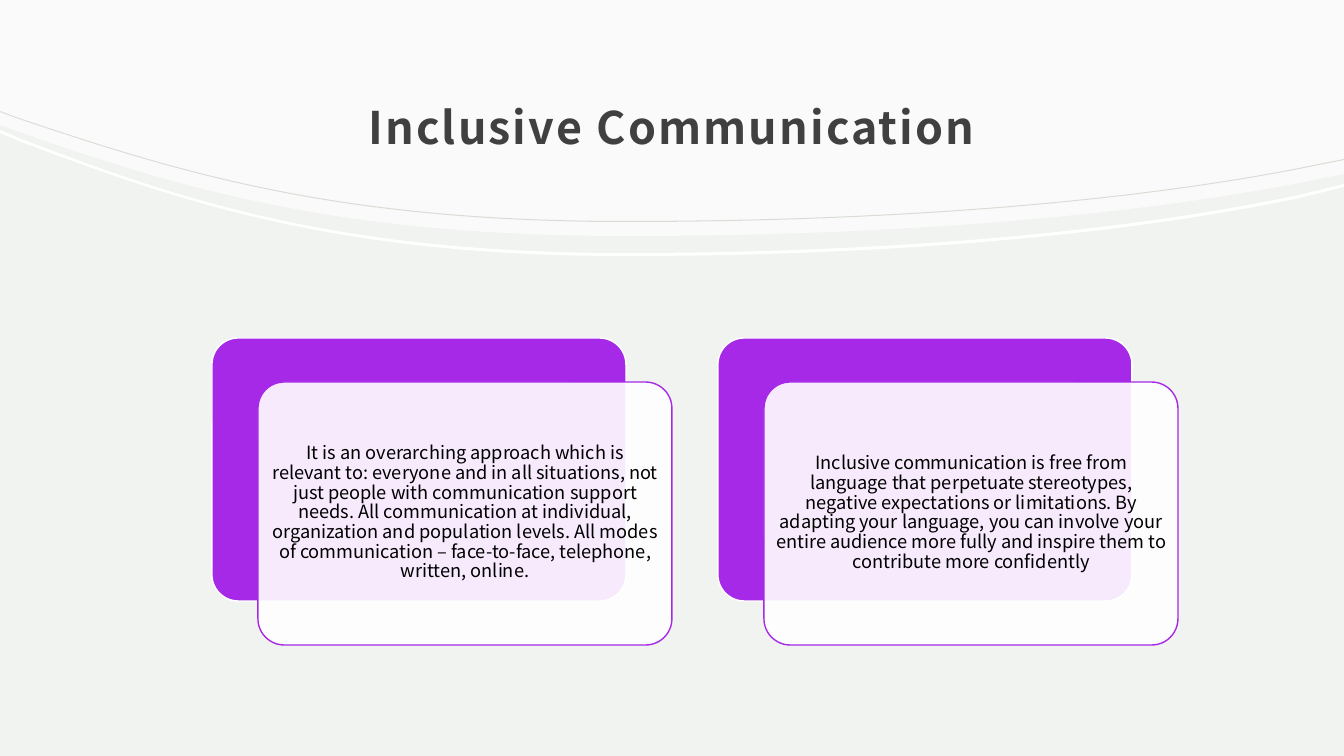
from dataclasses import dataclass

from lxml import etree
from pptx import Presentation
from pptx import util as u
from pptx.dml.color import RGBColor
from pptx.enum import shapes, text
from pptx.oxml.ns import qn

EMU_PER_PX = 914400 / 100.8
SLIDE_WIDTH, SLIDE_HEIGHT = 1344, 756


@dataclass(frozen=True)
class Theme:
    font: str = "Noto Sans CJK JP"
    background: str = "F1F3F0"
    white: str = "FFFFFF"
    accent: str = "A629E7"
    hairline: str = "D8DED5"
    title: str = "404040"
    body: str = "000000"
    title_size: int = 32
    body_size: int = 13


THEME = Theme()

# Header edges: a short line, two cubic curves, a short line.
# All edges share the x positions of their points and control points.
CURVE_X = [0, 19, 180, 336, 625, 882, 1119, 1299, 1344]
PANEL_EDGE = [125, 132, 188, 236, 236, 236, 218, 183, 174]
WHITE_TOP = [130, 138, 200, 253, 253, 253, 233, 195, 184]
WHITE_BOTTOM = [133, 141, 202, 256, 256, 256, 236, 198, 187]
GREY_TOP = [111, 118, 172, 221, 221, 221, 203, 168, 159]
GREY_BOTTOM = [y + 1 for y in GREY_TOP]
CURVE_STARTS = (2, 5)

# Cards
CARD_LEFT, CARD_TOP, CARD_WIDTH, CARD_HEIGHT = 212, 338, 414, 263
CARD_PITCH, FRONT_DX, FRONT_DY, TEXT_INSET = 506, 46, 44, 7
CARD_TEXTS = [
    "It is an overarching approach which is relevant to: everyone and in all "
    "situations, not just people with communication support needs. All "
    "communication at individual, organization and population levels. All modes "
    "of communication – face-to-face, telephone, written, online.",
    "Inclusive communication is free from language that perpetuate stereotypes, "
    "negative expectations or limitations. By adapting your language, you can "
    "involve your entire audience more fully and inspire them to contribute more "
    "confidently",
]


def px(length):
    return u.Emu(round(length * EMU_PER_PX))


def set_fill(shape, color, opacity=100):
    shape.shadow.inherit = False
    shape.fill.solid()
    shape.fill.fore_color.rgb = RGBColor.from_string(color)
    if opacity < 100:
        color_element = shape.element.spPr.find(qn("a:solidFill"))[0]
        etree.SubElement(color_element, qn("a:alpha"), val=str(opacity * 1000))


def bend(shape, starts):
    """Turn each run of three line segments that begins at a start into a cubic curve."""
    segments = list(shape.element.iter(qn("a:lnTo")))
    for start in starts:
        first, *others = segments[start:start + 3]
        cubic = etree.Element(qn("a:cubicBezTo"))
        first.addprevious(cubic)
        for segment in (first, *others):
            cubic.append(segment[0])
            segment.getparent().remove(segment)


def add_band(slide, top, bottom, color, opacity=100):
    """Fill between a bottom edge and a top edge, or the slide's top if there is none."""
    upper = list(zip(CURVE_X, top)) if top else [(0, 0), (SLIDE_WIDTH, 0)]
    lower = list(zip(CURVE_X, bottom))[::-1]
    outline = [(px(x), px(y)) for x, y in upper + lower]
    builder = slide.shapes.build_freeform(*outline[0])
    builder.add_line_segments(outline[1:], close=True)
    band = builder.convert_to_shape()
    # Segment n ends at outline point n + 1
    starts = [len(upper) + start - 1 for start in CURVE_STARTS]
    if top:
        starts += [start - 1 for start in CURVE_STARTS]
    bend(band, starts)
    set_fill(band, color, opacity)
    band.line.fill.background()


def write_text(frame, content, size, color, spacing, inset, bold=False):
    frame.word_wrap = True
    frame.auto_size = text.MSO_AUTO_SIZE.NONE
    frame.vertical_anchor = text.MSO_ANCHOR.MIDDLE
    frame.margin_left = frame.margin_right = px(inset)
    frame.margin_top = frame.margin_bottom = px(inset)
    paragraph = frame.paragraphs[0]
    paragraph.alignment = text.PP_ALIGN.CENTER
    paragraph.line_spacing = spacing
    run = paragraph.add_run()
    run.text = content
    run.font.name = THEME.font
    run.font.size = u.Pt(size)
    run.font.bold = bold
    run.font.color.rgb = RGBColor.from_string(color)
    return paragraph, run


def add_title(slide, content):
    title = slide.shapes.title
    title.left, title.top = px(134), px(60)
    title.width, title.height = px(1076), px(115)
    _, run = write_text(title.text_frame, content, THEME.title_size,
                        THEME.title, 1.3, 12, bold=True)
    title.text_frame.margin_bottom = px(10)
    run.font._element.set("spc", "150")
    # Bring the title in front of the header panel
    title.element.getparent().append(title.element)


def add_rounded_box(group, left, top, fill, line, opacity=100):
    box = group.shapes.add_shape(shapes.MSO_SHAPE.ROUNDED_RECTANGLE, px(left), px(top),
                                 px(CARD_WIDTH), px(CARD_HEIGHT))
    box.adjustments[0] = 0.1
    set_fill(box, fill, opacity)
    box.line.color.rgb = RGBColor.from_string(line)
    box.line.width = u.Pt(1)


def add_card(group, left, content):
    front_left, front_top = left + FRONT_DX, CARD_TOP + FRONT_DY
    add_rounded_box(group, left, CARD_TOP, THEME.accent, THEME.white)
    add_rounded_box(group, front_left, front_top, THEME.white, THEME.accent, opacity=90)
    label = group.shapes.add_textbox(px(front_left + TEXT_INSET), px(front_top + TEXT_INSET),
                                     px(CARD_WIDTH - 2 * TEXT_INSET),
                                     px(CARD_HEIGHT - 2 * TEXT_INSET - 1))
    paragraph, _ = write_text(label.text_frame, content, THEME.body_size,
                              THEME.body, 0.9, 5)
    paragraph.space_after = u.Pt(4.5)


def main():
    presentation = Presentation()
    presentation.slide_width = px(SLIDE_WIDTH)
    presentation.slide_height = px(SLIDE_HEIGHT)
    slide = presentation.slides.add_slide(presentation.slide_layouts[5])
    slide.background.fill.solid()
    slide.background.fill.fore_color.rgb = RGBColor.from_string(THEME.background)

    # Header
    add_band(slide, None, PANEL_EDGE, THEME.white, opacity=60)
    add_band(slide, WHITE_TOP, WHITE_BOTTOM, THEME.white)
    add_title(slide, "Inclusive Communication")
    add_band(slide, GREY_TOP, GREY_BOTTOM, THEME.hairline)

    # Cards
    cards = slide.shapes.add_group_shape()
    for index, content in enumerate(CARD_TEXTS):
        add_card(cards, CARD_LEFT + index * CARD_PITCH, content)

    presentation.save("out.pptx")


if __name__ == "__main__":
    main()
